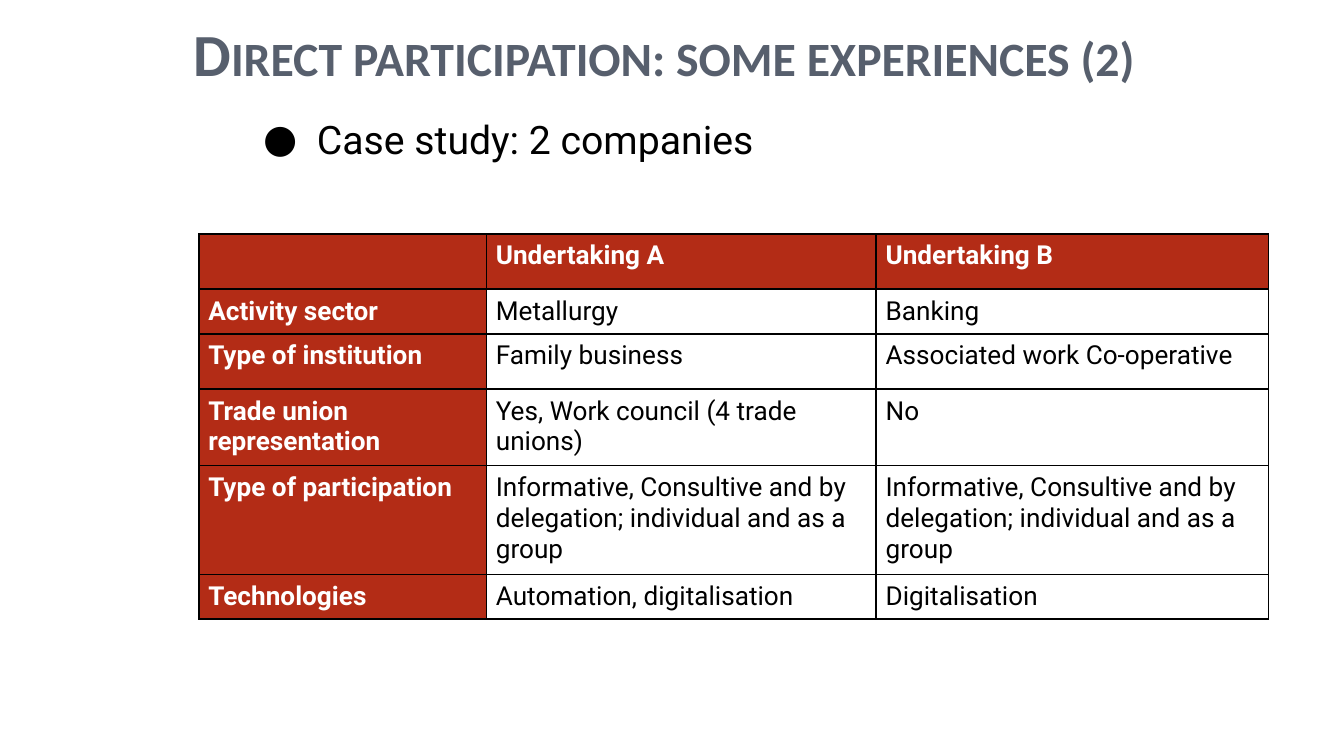
from dataclasses import dataclass

from lxml.etree import SubElement
from pptx import Presentation
from pptx.dml.color import RGBColor
from pptx.enum.text import MSO_ANCHOR as Anchor
from pptx.oxml.ns import qn
from pptx.util import Inches, Pt

SLATE = RGBColor(0x57, 0x5F, 0x6D)
BLACK = RGBColor(0x00, 0x00, 0x00)
WHITE = RGBColor(0xFF, 0xFF, 0xFF)
BRICK = RGBColor(0xB3, 0x2C, 0x16)

SLIDE_WIDTH = Inches(10)
SLIDE_HEIGHT = SLIDE_WIDTH * 9 // 16
COLUMN_WIDTHS = (2.14, 2.9, 2.92)
BORDER_SIDES = ("a:lnL", "a:lnR", "a:lnT", "a:lnB")
CELL_MARGINS = {"margin_left": 0.07, "margin_right": 0.07, "margin_top": 0.05, "margin_bottom": 0.05}
BOX_MARGINS = dict.fromkeys(CELL_MARGINS, 0.1)
PARTICIPATION = "Informative, Consultive and by delegation; individual and as a group"


@dataclass(frozen=True)
class TextStyle:
    size: float
    name: str
    color: RGBColor
    bold: bool = False


@dataclass(frozen=True)
class TableRow:
    height: float
    texts: tuple[str, str, str]


TITLE = TextStyle(32, "Calibri", SLATE, True)
BULLET = TextStyle(21, "Roboto", BLACK)
HEADING = TextStyle(14, "Roboto", WHITE, True)
BODY = TextStyle(14, "Roboto", BLACK)

ROWS = (
    TableRow(0.41, ("", "Undertaking A", "Undertaking B")),
    TableRow(0.33, ("Activity sector", "Metallurgy", "Banking")),
    TableRow(0.41, ("Type of institution", "Family business", "Associated work Co-operative")),
    TableRow(0.57, ("Trade union representation", "Yes, Work council (4 trade unions)", "No")),
    TableRow(0.81, ("Type of participation", PARTICIPATION, PARTICIPATION)),
    TableRow(0.33, ("Technologies", "Automation, digitalisation", "Digitalisation")),
)


def set_margins(target, margins: dict[str, float]) -> None:
    """Set the inner margins of a cell or text frame."""
    for side, length in margins.items():
        setattr(target, side, Inches(length))


def write_text(paragraph, text: str, style: TextStyle):
    """Add a formatted run and return it."""
    run = paragraph.add_run()
    run.text = text
    formats = {"size": Pt(style.size), "name": style.name, "bold": style.bold}
    for attribute, value in formats.items():
        setattr(run.font, attribute, value)
    run.font.color.rgb = style.color
    return run


def add_text_frame(slide, left: float, top: float, width: float, height: float, anchor: Anchor):
    """Add a wrapping text box and return its text frame."""
    shape = slide.shapes.add_textbox(Inches(left), Inches(top), Inches(width), Inches(height))
    frame = shape.text_frame
    frame.word_wrap = True
    frame.vertical_anchor = anchor
    set_margins(frame, BOX_MARGINS)
    return frame


def add_bullet(paragraph) -> None:
    """Give a paragraph a black round bullet with a hanging indent."""
    properties = paragraph._p.get_or_add_pPr()
    properties.set("marL", str(Inches(0.5)))
    properties.set("indent", str(Inches(-0.4)))
    color = SubElement(properties, qn("a:buClr"))
    SubElement(color, qn("a:srgbClr"), val=str(BLACK))
    SubElement(properties, qn("a:buFont"), typeface=BULLET.name)
    SubElement(properties, qn("a:buChar"), char="●")


def add_borders(cell) -> None:
    """Draw thin black lines around a cell."""
    properties = cell._tc.get_or_add_tcPr()
    for side in BORDER_SIDES:
        line = SubElement(properties, qn(side), w=str(Pt(1)))
        fill = SubElement(line, qn("a:solidFill"))
        SubElement(fill, qn("a:srgbClr"), val=str(BLACK))


def fill_cell(cell, text: str, is_heading: bool) -> None:
    """Format a cell and write its text."""
    set_margins(cell, CELL_MARGINS)
    add_borders(cell)
    if is_heading:
        cell.fill.solid()
        cell.fill.fore_color.rgb = BRICK
    else:
        cell.fill.background()
    if text:
        write_text(cell.text_frame.paragraphs[0], text, HEADING if is_heading else BODY)


def add_comparison_table(slide, left: float, top: float) -> None:
    """Add the table that compares the two undertakings."""
    width = Inches(sum(COLUMN_WIDTHS))
    height = Inches(sum(row.height for row in ROWS))
    table = slide.shapes.add_table(
        len(ROWS), len(COLUMN_WIDTHS), Inches(left), Inches(top), width, height
    ).table
    table.first_row = table.horz_banding = False
    for column, column_width in zip(table.columns, COLUMN_WIDTHS):
        column.width = Inches(column_width)
    for row_index, row in enumerate(ROWS):
        table.rows[row_index].height = Inches(row.height)
        for column_index, text in enumerate(row.texts):
            is_heading = row_index == 0 or column_index == 0
            fill_cell(table.cell(row_index, column_index), text, is_heading)


def main() -> None:
    """Build and save the slide."""
    presentation = Presentation()
    presentation.slide_width = SLIDE_WIDTH
    presentation.slide_height = SLIDE_HEIGHT
    slide = presentation.slides.add_slide(presentation.slide_layouts[6])

    title = add_text_frame(slide, 1.34, 0.27, 7.69, 0.49, Anchor.BOTTOM)
    run = write_text(title.paragraphs[0], "Direct participation: some experiences (2)", TITLE)
    run.font._element.set("cap", "small")

    case_study = add_text_frame(slide, 1.76, 0.76, 7.28, 0.56, Anchor.TOP)
    add_bullet(case_study.paragraphs[0])
    write_text(case_study.paragraphs[0], "Case study: 2 companies", BULLET)

    add_comparison_table(slide, 1.48, 1.74)
    presentation.save("out.pptx")


if __name__ == "__main__":
    main()
